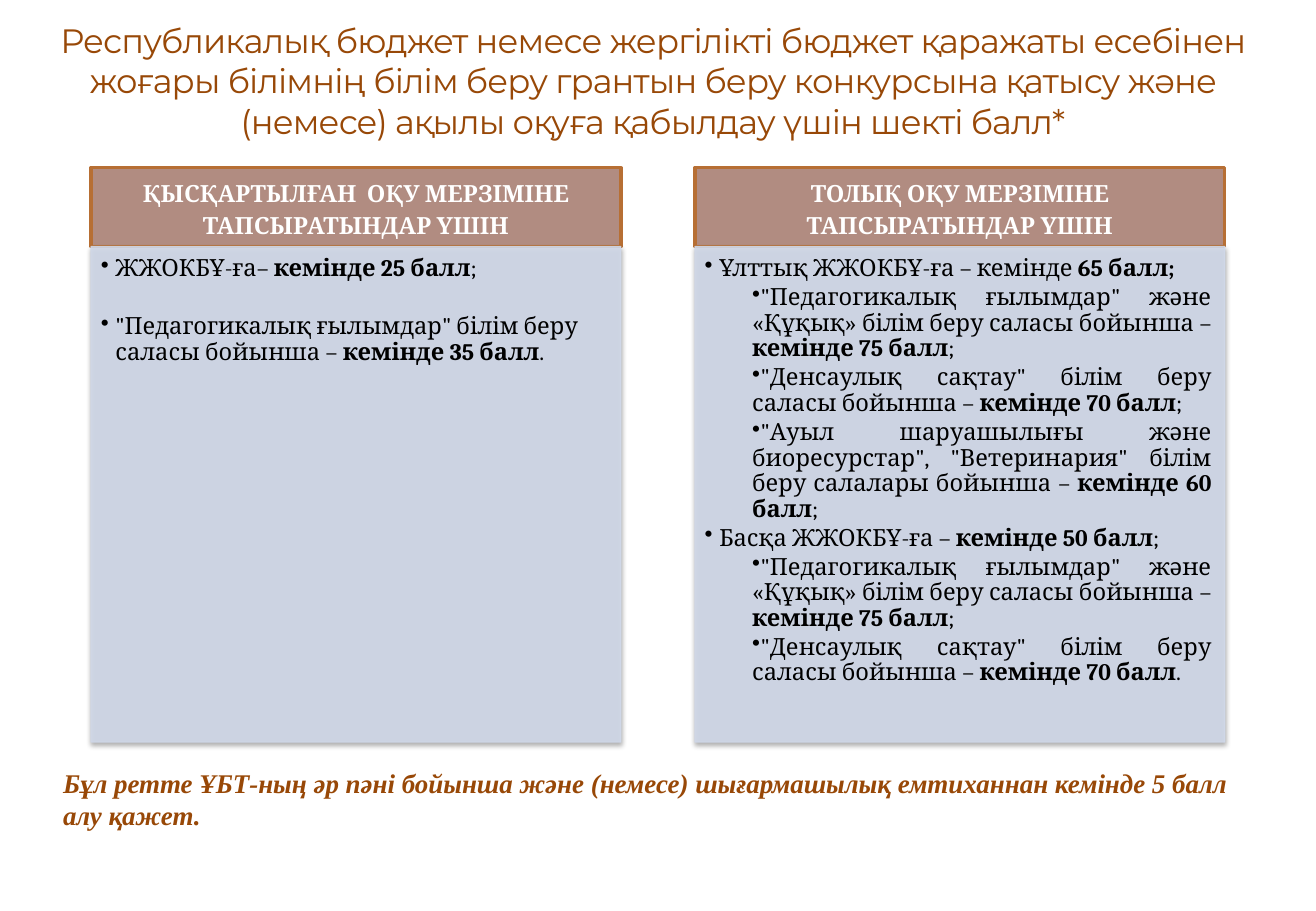
import lxml.etree
import pptx
import pptx.dml.color
import pptx.enum.shapes
import pptx.enum.text
import pptx.oxml
import pptx.oxml.ns
import pptx.util

Inches = pptx.util.Inches
Pt = pptx.util.Pt
RGBColor = pptx.dml.color.RGBColor
Align = pptx.enum.text.PP_ALIGN
Anchor = pptx.enum.text.MSO_ANCHOR
qn = pptx.oxml.ns.qn

BROWN = RGBColor(0x98, 0x48, 0x07)
HEADER_FILL = RGBColor(0xB1, 0x8C, 0x81)
HEADER_LINE = RGBColor(0xB7, 0x6F, 0x34)
BODY_FILL = RGBColor(0xD0, 0xD8, 0xE8)
WHITE = RGBColor(0xFF, 0xFF, 0xFF)
BLACK = RGBColor(0x00, 0x00, 0x00)

TITLE = ("Республикалық бюджет немесе жергілікті бюджет қаражаты есебінен "
         "жоғары білімнің білім беру грантын беру конкурсына қатысу және "
         "(немесе) ақылы оқуға қабылдау үшін шекті балл*")
FOOTNOTE = ("Бұл ретте ҰБТ-ның әр пәні бойынша және (немесе) шығармашылық "
            "емтиханнан кемінде 5 балл алу қажет.")

# Each rule: level, lead text, bold threshold, closing mark
SHORT_HEADING = "ҚЫСҚАРТЫЛҒАН  ОҚУ МЕРЗІМІНЕ ТАПСЫРАТЫНДАР ҮШІН"
SHORT_RULES = [
    (0, "ЖЖОКБҰ-ға– ", "кемінде 25 балл", ";"),
    (0, "\"Педагогикалық ғылымдар\" білім беру саласы бойынша – ", "кемінде 35 балл", "."),
]
FULL_HEADING = "ТОЛЫҚ ОҚУ МЕРЗІМІНЕ ТАПСЫРАТЫНДАР ҮШІН"
PEDAGOGY_LAW = "\"Педагогикалық ғылымдар\" және «Құқық» білім беру саласы бойынша – "
HEALTH = "\"Денсаулық сақтау\" білім беру саласы бойынша – "
FULL_RULES = [
    (0, "Ұлттық ЖЖОКБҰ-ға – кемінде ", "65 балл;", ""),
    (1, PEDAGOGY_LAW, "кемінде 75 балл", ";"),
    (1, HEALTH, "кемінде 70 балл", ";"),
    (1, "\"Ауыл шаруашылығы және биоресурстар\", \"Ветеринария\" білім беру "
        "салалары бойынша – ", "кемінде 60 балл", ";"),
    (0, "Басқа ЖЖОКБҰ-ға – ", "кемінде 50 балл", ";"),
    (1, PEDAGOGY_LAW, "кемінде 75 балл", ";"),
    (1, HEALTH, "кемінде 70 балл", "."),
]
INDENTS = [(0.12, -0.12), (0.39, 0)]
HEADER_HEIGHT = 0.65


def set_font(font, name, size, color):
    font.name = name
    font.size = Pt(size)
    font.color.rgb = color


def set_frame(frame, insets, anchor):
    frame.word_wrap = True
    frame.vertical_anchor = anchor
    (frame.margin_left, frame.margin_top,
     frame.margin_right, frame.margin_bottom) = map(Inches, insets)


def add_panel(page, box, fill, line, line_width):
    panel = page.shapes.add_shape(pptx.enum.shapes.MSO_SHAPE.RECTANGLE, *map(Inches, box))
    panel.shadow.inherit = False
    panel.fill.solid()
    panel.fill.fore_color.rgb = fill
    panel.line.color.rgb = line
    panel.line.width = Pt(line_width)
    return panel


def soften(panel):
    """Make the fill and line 90% opaque and add a soft shadow below."""
    properties = panel._element.spPr
    for color in properties.iter(qn("a:srgbClr")):
        lxml.etree.SubElement(color, qn("a:alpha"), val="90000")
    shadow = lxml.etree.SubElement(
        properties.find(qn("a:effectLst")), qn("a:outerShdw"),
        blurRad=str(Pt(3.1)), dist=str(Pt(1.8)), dir="5400000", rotWithShape="0")
    color = lxml.etree.SubElement(shadow, qn("a:srgbClr"), val="000000")
    lxml.etree.SubElement(color, qn("a:alpha"), val="35000")


def add_rule(para, rule, align):
    level, lead, threshold, mark = rule
    margin, indent = INDENTS[level]
    para.alignment = align
    para.line_spacing = 0.9
    para.space_after = Pt(2.1)
    properties = para._p.get_or_add_pPr()
    properties.set("marL", str(Inches(margin)))
    properties.set("indent", str(Inches(indent)))
    lxml.etree.SubElement(properties, qn("a:buChar"), char="•")
    set_font(para.font, "Cambria", 14, BLACK)
    for text, bold in ((lead, False), (threshold, True), (mark, False)):
        if text:
            span = para.add_run()
            span.text = text
            span.font.bold = bold


def add_column(page, box, heading, rules, align, gap=0):
    """Place a header over its list; gap is the space between rules in points."""
    left, top, width, height = box
    header = add_panel(page, (left, top, width, HEADER_HEIGHT), HEADER_FILL, HEADER_LINE, 2)
    set_frame(header.text_frame, (0.11, 0.06, 0.11, 0.06), Anchor.MIDDLE)
    para = header.text_frame.paragraphs[0]
    para.text = heading
    para.alignment = Align.CENTER
    para.line_spacing = Pt(19.2)
    set_font(para.font, "Cambria", 14, WHITE)
    para.font.bold = True

    body = add_panel(page, (left, top + HEADER_HEIGHT, width, height - HEADER_HEIGHT),
                     BODY_FILL, BODY_FILL, 0.75)
    soften(body)
    frame = body.text_frame
    set_frame(frame, (0.08, 0.08, 0.11, 0.12), Anchor.TOP)
    for number, rule in enumerate(rules):
        para = frame.add_paragraph() if number else frame.paragraphs[0]
        if number and gap:
            para.space_before = Pt(gap)
        add_rule(para, rule, align)


def add_title(page, box):
    frame = page.shapes.add_textbox(*map(Inches, box)).text_frame
    set_frame(frame, (0, 0, 0, 0), Anchor.TOP)
    para = frame.paragraphs[0]
    para.alignment = Align.CENTER
    set_font(para.font, "Montserrat", 20, BROWN)
    span = para.add_run()
    span.text = TITLE
    span._r.get_or_add_rPr().set("spc", "-50")


def add_footnote(page, box):
    frame = page.shapes.add_textbox(*map(Inches, box)).text_frame
    frame.word_wrap = True
    para = frame.paragraphs[0]
    para.text = FOOTNOTE
    set_font(para.font, "Times New Roman", 16, BROWN)
    para.font.bold = True
    para.font.italic = True


def main():
    deck = pptx.Presentation()
    deck.slide_width = Inches(10.83)
    deck.slide_height = Inches(7.5)
    page = deck.slides.add_slide(deck.slide_layouts[6])
    add_title(page, (0.33, 0.16, 10.08, 1.01))
    add_column(page, (0.75, 1.38, 4.36, 4.73), SHORT_HEADING, SHORT_RULES, Align.LEFT, gap=17.2)
    add_column(page, (5.72, 1.38, 4.36, 4.73), FULL_HEADING, FULL_RULES, Align.JUSTIFY)
    add_footnote(page, (0.42, 6.26, 9.92, 0.64))
    deck.save("out.pptx")


if __name__ == "__main__":
    main()
